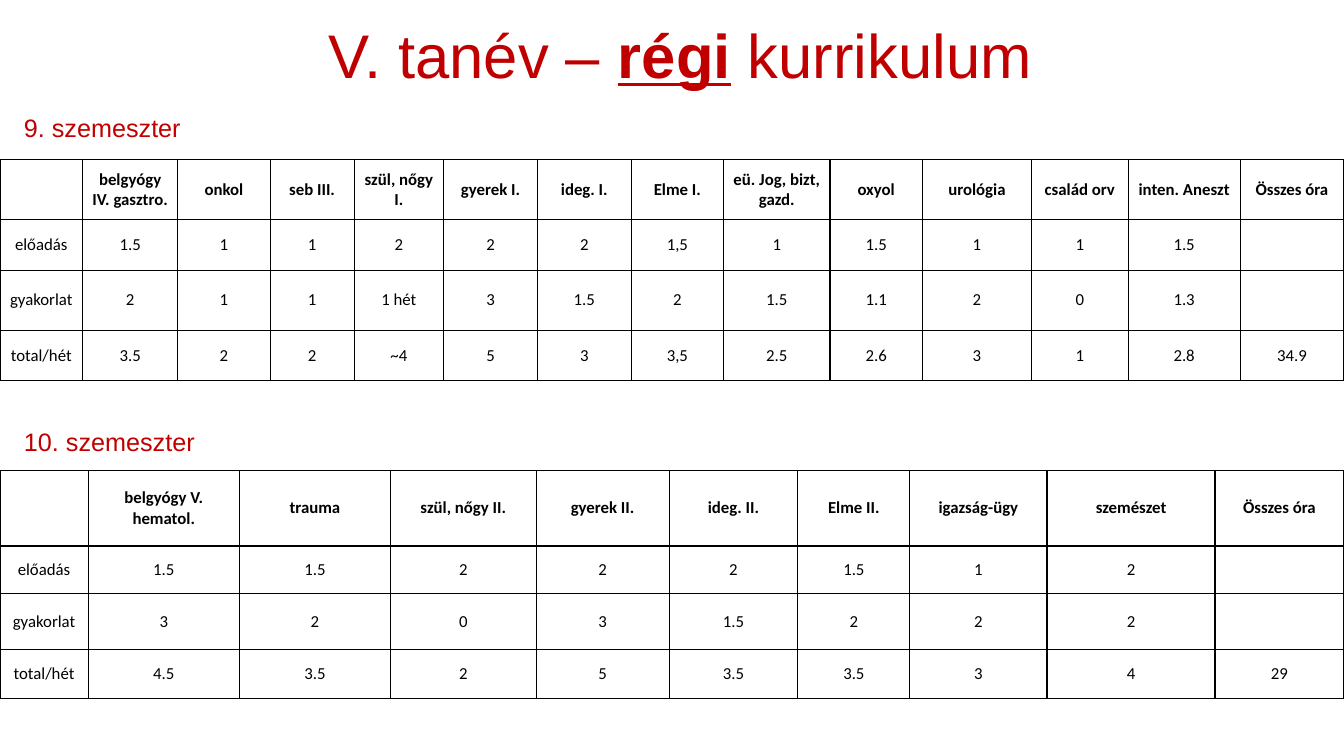
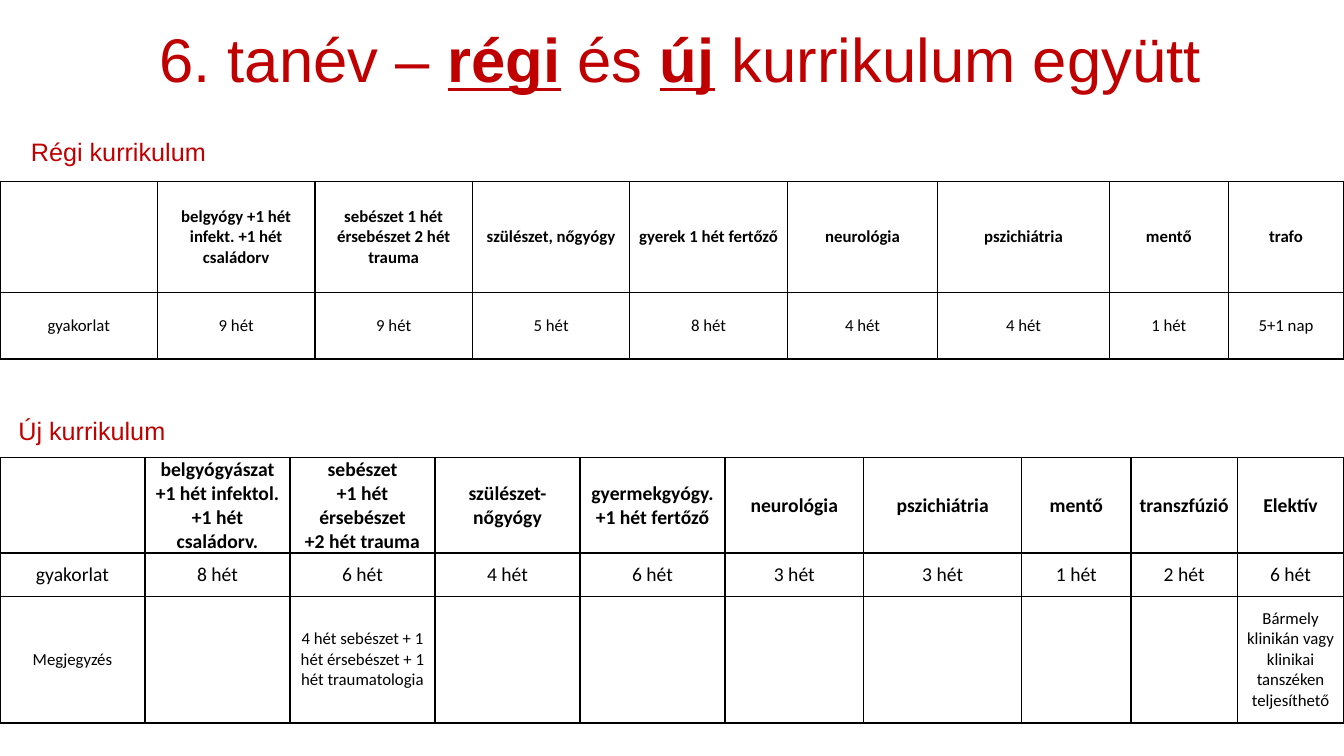
from dataclasses import dataclass

from lxml.etree import SubElement
from pptx import Presentation
from pptx.dml.color import RGBColor
from pptx.enum.text import MSO_ANCHOR, MSO_AUTO_SIZE, PP_ALIGN
from pptx.oxml.ns import qn
from pptx.slide import Slide
from pptx.table import _Cell
from pptx.text.text import _Paragraph
from pptx.util import Pt

COLORS = {"heading": "C00000", "body": "000000", "border": "000000"}
HEADING_FONT = "Arial"
BODY_FONT = "Calibri"
SLIDE_WIDTH = 960
SLIDE_HEIGHT = 540
BORDER_WIDTH = 1
CELL_INSET = 5


@dataclass(frozen=True)
class TitlePart:
    text: str
    emphasis: bool = False


@dataclass(frozen=True)
class Row:
    height: float
    cells: tuple[str, ...]
    size: int = 12


@dataclass(frozen=True)
class Section:
    label: str
    label_left: float
    label_top: float
    label_width: float
    table_top: float
    columns: tuple[float, ...]
    rows: tuple[Row, ...]


@dataclass(frozen=True)
class Year:
    title_top: float
    title: tuple[TitlePart, ...]
    sections: tuple[Section, ...]


YEARS = (
    Year(
        13.5,
        (TitlePart(" V. tanév – "), TitlePart("régi", True), TitlePart(" kurrikulum")),
        (
            Section(
                "9. szemeszter", 10, 77, 127.5, 114,
                (59, 68, 66, 60, 64, 67, 67, 66, 76, 66, 78, 69, 80, 74),
                (
                    Row(43, ("", "belgyógy IV. gasztro.", "onkol", "seb III.", "szül, nőgy I.",
                             "gyerek I.", "ideg. I.", "Elme I.", "eü. Jog, bizt, gazd.", "oxyol",
                             "urológia", "család orv", "inten. Aneszt", "Összes óra")),
                    Row(36, ("előadás", "1.5", "1", "1", "2", "2", "2", "1,5", "1", "1.5",
                             "1", "1", "1.5", "")),
                    Row(43, ("gyakorlat", "2", "1", "1", "1 hét", "3", "1.5", "2", "1.5", "1.1",
                             "2", "0", "1.3", "")),
                    Row(36, ("total/hét", "3.5", "2", "2", "~4", "5", "3", "3,5", "2.5", "2.6",
                             "3", "1", "2.8", "34.9")),
                ),
            ),
            Section(
                "10. szemeszter", 10, 301, 137.5, 336,
                (63, 108, 108, 104, 95, 92, 80, 98, 120, 92),
                (
                    Row(54, ("", "belgyógy V. hematol.", "trauma", "szül, nőgy II.", "gyerek II.",
                             "ideg. II.", "Elme II.", "igazság-ügy", "szemészet", "Összes óra")),
                    Row(34, ("előadás", "1.5", "1.5", "2", "2", "2", "1.5", "1", "2", "")),
                    Row(40, ("gyakorlat", "3", "2", "0", "3", "1.5", "2", "2", "2", "")),
                    Row(35, ("total/hét", "4.5", "3.5", "2", "5", "3.5", "3.5", "3", "4", "29")),
                ),
            ),
        ),
    ),
    Year(
        17,
        (TitlePart(" 6. tanév – "), TitlePart("régi", True), TitlePart(" és "),
         TitlePart("új", True), TitlePart(" kurrikulum együtt")),
        (
            Section(
                "Régi kurrikulum", 15, 94, 141, 129.5,
                (112.5,) * 5 + (107.5, 122.5, 85, 82.5),
                (
                    Row(79.5, ("", "belgyógy +1 hét\ninfekt. +1 hét\ncsaládorv",
                               "sebészet 1 hét érsebészet 2 hét trauma", "szülészet, nőgyógy",
                               "gyerek 1 hét fertőző", "neurológia", "pszichiátria", "mentő",
                               "trafo")),
                    Row(47.5, ("gyakorlat", "9 hét", "9 hét", "5 hét", "8 hét", "4 hét", "4 hét",
                               "1 hét", "5+1 nap")),
                ),
            ),
            Section(
                "Új kurrikulum", 6, 293, 120, 327,
                (103.6,) * 5 + (99, 113, 78, 76, 76),
                (
                    Row(68, ("", "belgyógyászat\n+1 hét infektol.\n+1 hét\ncsaládorv.",
                             "sebészet\n+1 hét érsebészet\n+2 hét trauma", "szülészet-nőgyógy",
                             "gyermekgyógy.\n+1 hét fertőző", "neurológia", "pszichiátria",
                             "mentő", "transzfúzió", "Elektív"), 14),
                    Row(31, ("gyakorlat", "8 hét", "6 hét", "4 hét", "6 hét", "3 hét", "3 hét",
                             "1 hét", "2 hét", "6 hét"), 14),
                    Row(90.5, ("Megjegyzés", "",
                               "4 hét sebészet + 1 hét érsebészet + 1 hét traumatologia",
                               "", "", "", "", "", "",
                               "Bármely klinikán vagy klinikai tanszéken teljesíthető")),
                ),
            ),
        ),
    ),
)


def add_run(paragraph: _Paragraph, text: str, font: str, size: float, color: str,
            bold: bool = False, underline: bool = False) -> None:
    run = paragraph.add_run()
    run.text = text
    run.font.name = font
    run.font.size = Pt(size)
    run.font.bold = bold
    run.font.underline = underline
    run.font.color.rgb = RGBColor.from_string(COLORS[color])


def draw_title(slide: Slide, year: Year) -> None:
    title = slide.shapes.add_textbox(Pt(66), Pt(year.title_top), Pt(828), Pt(56)).text_frame
    title.word_wrap = True
    title.vertical_anchor = MSO_ANCHOR.MIDDLE
    line = title.paragraphs[0]
    line.alignment = PP_ALIGN.CENTER
    line.line_spacing = 0.9
    for part in year.title:
        add_run(line, part.text, HEADING_FONT, 44, "heading", part.emphasis, part.emphasis)


def draw_label(slide: Slide, section: Section) -> None:
    label = slide.shapes.add_textbox(Pt(section.label_left), Pt(section.label_top),
                                     Pt(section.label_width), Pt(29)).text_frame
    label.word_wrap = False
    label.auto_size = MSO_AUTO_SIZE.SHAPE_TO_FIT_TEXT
    add_run(label.paragraphs[0], section.label, HEADING_FONT, 18, "heading")


def set_borders(cell: _Cell) -> None:
    properties = cell._tc.get_or_add_tcPr()
    for position, side in enumerate(("a:lnL", "a:lnR", "a:lnT", "a:lnB")):
        border = SubElement(properties, qn(side), w=str(Pt(BORDER_WIDTH)))
        fill = SubElement(border, qn("a:solidFill"))
        SubElement(fill, qn("a:srgbClr"), val=COLORS["border"])
        properties.insert(position, border)


def fill_cell(cell: _Cell, text: str, size: int, bold: bool) -> None:
    cell.fill.background()
    set_borders(cell)
    cell.vertical_anchor = MSO_ANCHOR.MIDDLE
    cell.margin_left = cell.margin_right = Pt(CELL_INSET)
    cell.margin_top = cell.margin_bottom = Pt(0)
    if not text:
        return
    for index, line in enumerate(text.split("\n")):
        frame = cell.text_frame
        paragraph = frame.add_paragraph() if index else frame.paragraphs[0]
        paragraph.alignment = PP_ALIGN.CENTER
        add_run(paragraph, line, BODY_FONT, size, "body", bold)


def draw_timetable(slide: Slide, section: Section) -> None:
    height = sum(row.height for row in section.rows)
    timetable = slide.shapes.add_table(len(section.rows), len(section.columns), Pt(0),
                                       Pt(section.table_top), Pt(SLIDE_WIDTH), Pt(height)).table
    timetable.first_row = False
    timetable.horz_banding = False
    for column, width in zip(timetable.columns, section.columns):
        column.width = Pt(width)
    for row_index, row in enumerate(section.rows):
        timetable.rows[row_index].height = Pt(row.height)
        for column_index, text in enumerate(row.cells):
            fill_cell(timetable.cell(row_index, column_index), text, row.size, row_index == 0)


def main() -> None:
    presentation = Presentation()
    presentation.slide_width = Pt(SLIDE_WIDTH)
    presentation.slide_height = Pt(SLIDE_HEIGHT)
    for year in YEARS:
        slide = presentation.slides.add_slide(presentation.slide_layouts[6])
        draw_title(slide, year)
        for section in year.sections:
            draw_label(slide, section)
            draw_timetable(slide, section)
    presentation.save("out.pptx")


if __name__ == "__main__":
    main()
